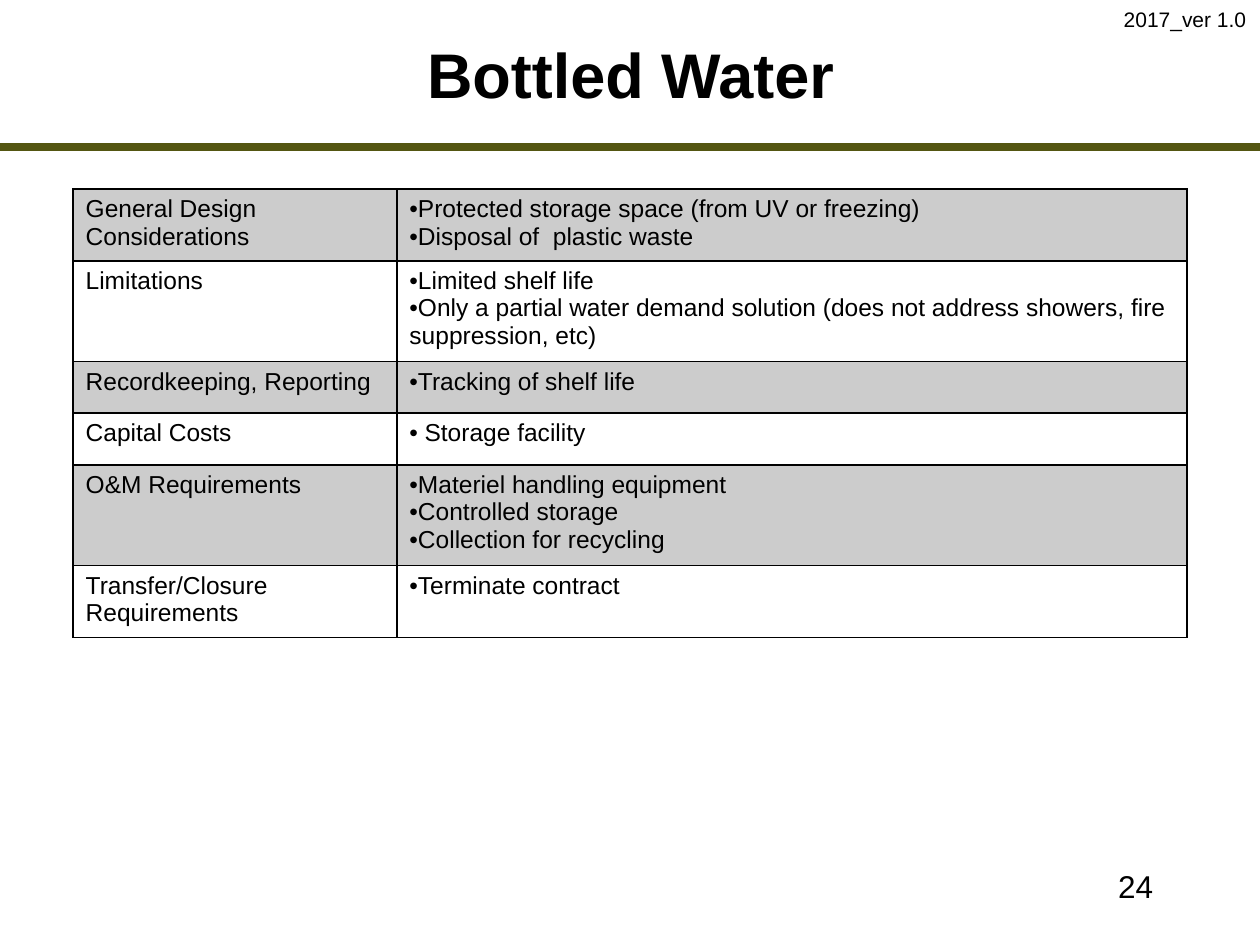
from lxml.etree import SubElement
from pptx import Presentation
from pptx.dml.color import RGBColor
from pptx.enum.shapes import MSO_CONNECTOR
from pptx.enum.text import MSO_ANCHOR, PP_ALIGN
from pptx.oxml import parse_xml
from pptx.oxml.ns import nsdecls, qn
from pptx.util import Inches, Pt

BLACK = RGBColor(0x00, 0x00, 0x00)
GRAY = RGBColor(0xCC, 0xCC, 0xCC)
OLIVE = RGBColor(0x54, 0x56, 0x12)
FONT = "Arial"

# Content: topic, bullet points, hanging indent of the bullets
ROWS = [
    ("General Design Considerations",
     ["Protected storage space (from UV or freezing)", "Disposal of  plastic waste"], 0),
    ("Limitations",
     ["Limited shelf life",
      "Only a partial water demand solution (does not address showers, fire suppression, etc)"], 0),
    ("Recordkeeping, Reporting", ["Tracking of shelf life"], 0),
    ("Capital Costs", ["Storage facility"], 0.12),
    ("O&M Requirements",
     ["Materiel handling equipment", "Controlled storage", "Collection for recycling"], 0),
    ("Transfer/Closure Requirements", ["Terminate contract"], 0),
]
ROW_HEIGHTS = [0.57, 0.8, 0.41, 0.41, 0.8, 0.57]
COLUMN_WIDTHS = [2.57, 6.27]

# Text, position, size, alignment, anchor, wrap, bold
LABELS = [
    ("Bottled Water", (1.17, 0.17, 7.67, 0.83), 36, PP_ALIGN.CENTER, MSO_ANCHOR.MIDDLE, True, True),
    ("24", (7.17, 6.83, 2.08, 0.5), 18, PP_ALIGN.RIGHT, MSO_ANCHOR.TOP, True, False),
    ("2017_ver 1.0", (8.82, 0, 1.18, 0.3), 12, PP_ALIGN.LEFT, MSO_ANCHOR.TOP, False, False),
]


def format_font(paragraph, size, bold=False):
    for name, value in {"name": FONT, "size": Pt(size), "bold": bold}.items():
        setattr(paragraph.font, name, value)
    paragraph.font.color.rgb = BLACK


def add_bullet(paragraph, indent):
    properties = paragraph._p.get_or_add_pPr()
    properties.set("marL", str(Inches(indent)))
    properties.set("indent", str(-Inches(indent)))
    SubElement(properties, qn("a:buFont"), typeface=FONT)
    SubElement(properties, qn("a:buChar"), char="•")


def add_borders(cell):
    properties = cell._tc.get_or_add_tcPr()
    for position, side in enumerate(("lnL", "lnR", "lnT", "lnB")):
        properties.insert(position, parse_xml(
            f'<a:{side} {nsdecls("a")} w="{Pt(1)}"><a:solidFill>'
            f'<a:srgbClr val="{BLACK}"/></a:solidFill></a:{side}>'))


def fill_cell(cell, lines, shaded, bulleted, indent=0):
    if shaded:
        cell.fill.solid()
        cell.fill.fore_color.rgb = GRAY
    else:
        cell.fill.background()
    add_borders(cell)
    cell.text = "\n".join(lines)
    for paragraph in cell.text_frame.paragraphs:
        if bulleted:
            add_bullet(paragraph, indent)
        format_font(paragraph, 14)


presentation = Presentation()
presentation.slide_width, presentation.slide_height = Inches(10), Inches(7.5)
slide = presentation.slides.add_slide(presentation.slide_layouts[6])

# Rule under the title
rule = slide.shapes.add_connector(
    MSO_CONNECTOR.STRAIGHT, 0, Inches(1.17), presentation.slide_width, Inches(1.17))
rule.line.color.rgb = OLIVE
rule.line.width = Pt(4.5)
SubElement(rule._element.spPr, qn("a:effectLst"))

# Table with every other row shaded
table = slide.shapes.add_table(
    len(ROWS), len(COLUMN_WIDTHS), Inches(0.58), Inches(1.5),
    Inches(sum(COLUMN_WIDTHS)), Inches(sum(ROW_HEIGHTS))).table
table.first_row = table.horz_banding = False
for column, width in zip(table.columns, COLUMN_WIDTHS):
    column.width = Inches(width)
for index, (topic, points, indent) in enumerate(ROWS):
    table.rows[index].height = Inches(ROW_HEIGHTS[index])
    shaded = index % 2 == 0
    fill_cell(table.cell(index, 0), [topic], shaded, False)
    fill_cell(table.cell(index, 1), points, shaded, True, indent)

# Title, page number and version
for text, position, size, alignment, anchor, wrap, bold in LABELS:
    frame = slide.shapes.add_textbox(*map(Inches, position)).text_frame
    frame.word_wrap = wrap
    frame.vertical_anchor = anchor
    paragraph = frame.paragraphs[0]
    paragraph.text = text
    paragraph.alignment = alignment
    format_font(paragraph, size, bold)

presentation.save("out.pptx")
